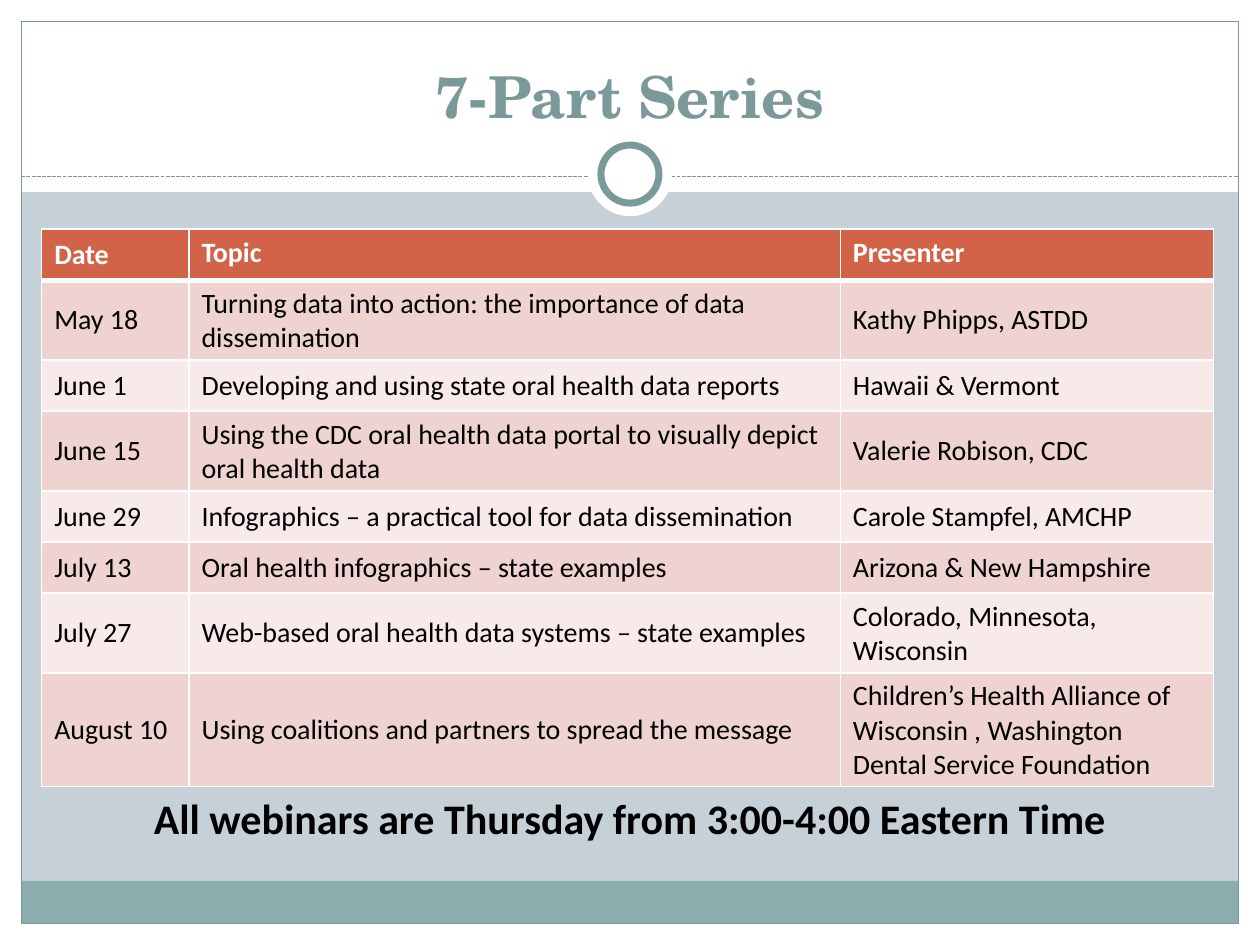
import pptx
import pptx.dml.color
import pptx.enum.dml
import pptx.enum.shapes
import pptx.enum.text
import pptx.oxml
import pptx.oxml.ns
import pptx.util
from pptx.util import Cm

COLORS = {
    "back": "C5D1D7", "white": "FFFFFF", "band": "8CADAE", "accent": "7C999A",
    "header": "D16349", "odd": "EED3D0", "even": "F7EAE9", "text": "000000",
}
TITLE = "7-Part Series"
NOTE = "All webinars are Thursday from 3:00-4:00 Eastern Time"
SCHEDULE = [
    ("Date", "Topic", "Presenter"),
    ("May 18", "Turning data into action: the importance of data dissemination",
     "Kathy Phipps, ASTDD"),
    ("June 1", "Developing and using state oral health data reports", "Hawaii & Vermont"),
    ("June 15", "Using the CDC oral health data portal to visually depict oral health data",
     "Valerie Robison, CDC"),
    ("June 29", "Infographics – a practical tool for data dissemination",
     "Carole Stampfel, AMCHP"),
    ("July 13", "Oral health infographics – state examples", "Arizona & New Hampshire"),
    ("July 27", "Web-based oral health data systems – state examples",
     "Colorado, Minnesota, Wisconsin"),
    ("August 10", "Using coalitions and partners to spread the message",
     "Children’s Health Alliance of Wisconsin , Washington Dental Service Foundation"),
]
COLUMN_WIDTHS = (2.97, 13.13, 7.52)
ROW_HEIGHT = 1.03

# Slide and frame, in cm
WIDTH, HEIGHT, MARGIN = 25.4, 19.05, 0.43
INNER_WIDTH, INNER_HEIGHT = WIDTH - 2 * MARGIN, HEIGHT - 2 * MARGIN
RULE_Y, RING_Y, BAND_HEIGHT = 3.56, 3.51, 0.86

RECT = pptx.enum.shapes.MSO_SHAPE.RECTANGLE
OVAL = pptx.enum.shapes.MSO_SHAPE.OVAL
ANCHOR = pptx.enum.text.MSO_ANCHOR


def color(name):
    return pptx.dml.color.RGBColor.from_string(COLORS[name])


def add_plain(page, kind, box, fill=None, line=None, points=0.75):
    """Add a preset shape without text; box is left, top, width, height in cm."""
    shape = page.shapes.add_shape(kind, *map(Cm, box))
    shape.shadow.inherit = False
    if fill:
        shape.fill.solid()
        shape.fill.fore_color.rgb = color(fill)
    else:
        shape.fill.background()
    if line:
        shape.line.color.rgb = color(line)
        shape.line.width = pptx.util.Pt(points)
    else:
        shape.line.fill.background()


def style(para, font, size, ink, bold):
    para.font.name = font
    para.font.size = pptx.util.Pt(size)
    para.font.bold = bold
    para.font.color.rgb = color(ink)


def add_centred_text(page, box, text, anchor, wrap, font, size, ink):
    frame = page.shapes.add_textbox(*map(Cm, box)).text_frame
    frame.word_wrap = wrap
    frame.vertical_anchor = anchor
    para = frame.paragraphs[0]
    para.text = text
    para.alignment = pptx.enum.text.PP_ALIGN.CENTER
    style(para, font, size, ink, True)


def add_borders(cell, top, bottom):
    """Draw white cell borders; top and bottom widths are in points."""
    properties = cell._tc.get_or_add_tcPr()
    for side, points in (("L", 1), ("R", 1), ("T", top), ("B", bottom)):
        properties.append(pptx.oxml.parse_xml(
            f'<a:ln{side} {pptx.oxml.ns.nsdecls("a")} w="{pptx.util.Pt(points)}">'
            f'<a:solidFill><a:srgbClr val="{COLORS["white"]}"/></a:solidFill></a:ln{side}>'))


def add_frame(page):
    for box in (
        (0, HEIGHT - MARGIN, WIDTH, MARGIN),
        (0, 0, WIDTH, 3.87),
        (0, 0, MARGIN, HEIGHT),
        (WIDTH - MARGIN, 0, MARGIN, HEIGHT),
    ):
        add_plain(page, RECT, box, "white")
    band_top = HEIGHT - MARGIN - BAND_HEIGHT
    add_plain(page, RECT, (MARGIN, band_top, INNER_WIDTH, BAND_HEIGHT), "band")
    add_plain(page, RECT, (MARGIN, MARGIN, INNER_WIDTH, INNER_HEIGHT), line="accent")

    rule = page.shapes.add_connector(
        pptx.enum.shapes.MSO_CONNECTOR.STRAIGHT,
        Cm(MARGIN), Cm(RULE_Y), Cm(WIDTH - MARGIN), Cm(RULE_Y))
    rule.line.color.rgb = color("accent")
    rule.line.width = pptx.util.Pt(0.75)
    rule.line.dash_style = pptx.enum.dml.MSO_LINE.SQUARE_DOT
    rule._element.spPr.append(
        pptx.oxml.parse_xml(f'<a:effectLst {pptx.oxml.ns.nsdecls("a")}/>'))

    for size, line in ((1.7, None), (1.17, "accent")):
        box = ((WIDTH - size) / 2, RING_Y - size / 2, size, size)
        add_plain(page, OVAL, box, "white", line, 4)


def add_schedule(page):
    table = page.shapes.add_table(
        len(SCHEDULE), len(COLUMN_WIDTHS), Cm(0.84), Cm(4.62),
        Cm(sum(COLUMN_WIDTHS)), Cm(ROW_HEIGHT * len(SCHEDULE))).table
    for column, width in zip(table.columns, COLUMN_WIDTHS):
        column.width = Cm(width)
    for r, texts in enumerate(SCHEDULE):
        table.rows[r].height = Cm(ROW_HEIGHT)
        header = r == 0
        fill = "header" if header else ("even", "odd")[r % 2]
        for c, text in enumerate(texts):
            cell = table.cell(r, c)
            add_borders(cell, 3 if r == 1 else 1, 3 if header else 1)
            cell.fill.solid()
            cell.fill.fore_color.rgb = color(fill)
            cell.vertical_anchor = ANCHOR.TOP if header and c else ANCHOR.MIDDLE
            cell.text = text
            style(cell.text_frame.paragraphs[0], "Calibri", 16,
                  "white" if header else "text", header)


def main():
    deck = pptx.Presentation()
    deck.slide_width, deck.slide_height = Cm(WIDTH), Cm(HEIGHT)
    page = deck.slides.add_slide(deck.slide_layouts[6])
    page.background.fill.solid()
    page.background.fill.fore_color.rgb = color("back")
    add_frame(page)
    add_centred_text(page, (0.85, 0.64, 23.7, 2.1), TITLE, ANCHOR.BOTTOM, True,
                     "TeX Gyre Schola", 33, "accent")
    add_schedule(page)
    add_centred_text(page, (2.76, 15.85, 19.88, 1.27), NOTE, ANCHOR.TOP, False,
                     "Calibri", 24, "text")
    deck.save("out.pptx")


if __name__ == "__main__":
    main()
